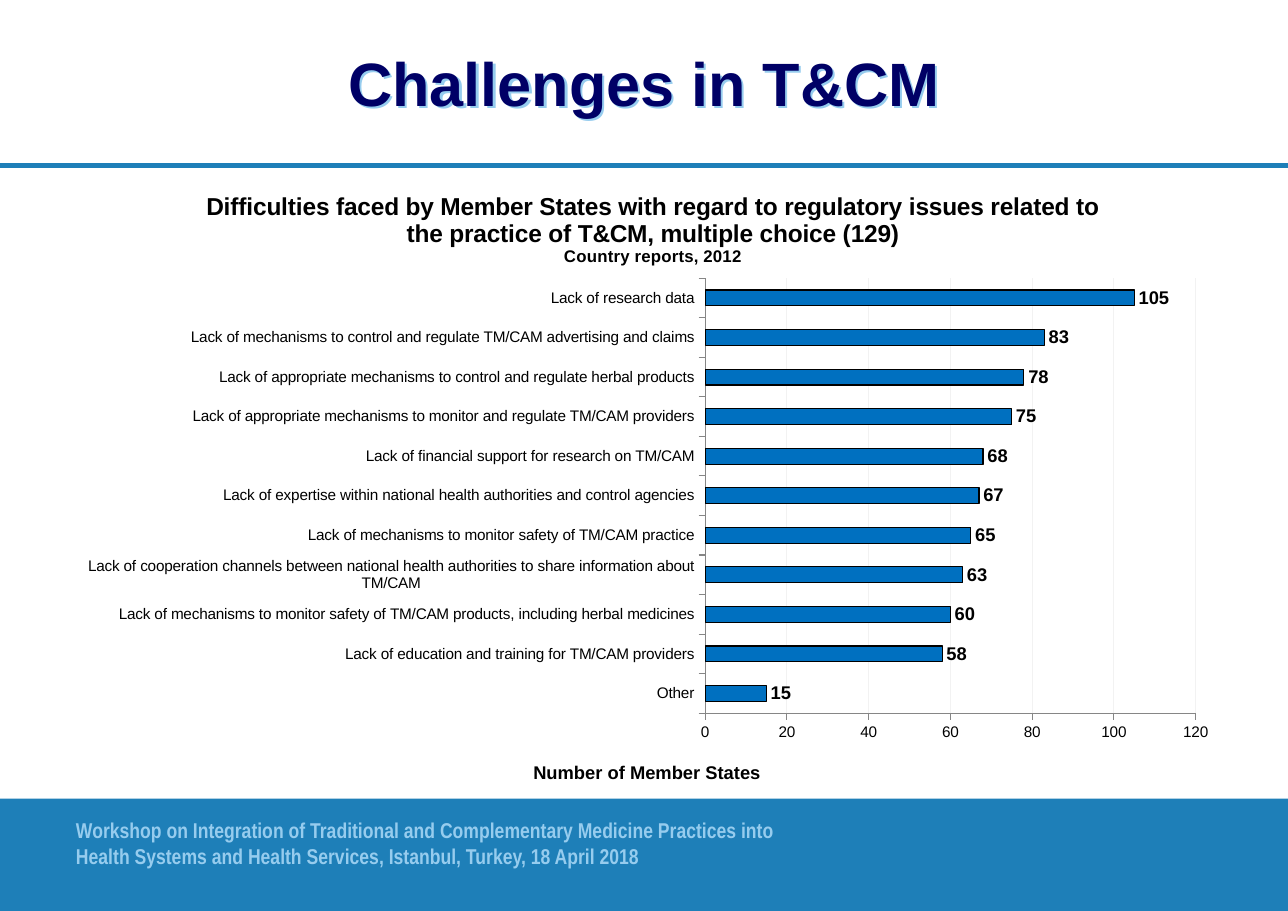
from lxml import etree
from pptx import Presentation
from pptx.chart.data import CategoryChartData
from pptx.dml.color import RGBColor
from pptx.enum.chart import XL_CHART_TYPE, XL_LABEL_POSITION, XL_TICK_MARK
from pptx.enum.shapes import MSO_CONNECTOR, MSO_SHAPE
from pptx.enum.text import MSO_ANCHOR, PP_ALIGN
from pptx.oxml.ns import qn
from pptx.util import Inches, Pt

BAR_CLUSTERED = XL_CHART_TYPE.BAR_CLUSTERED
OUTSIDE_END = XL_LABEL_POSITION.OUTSIDE_END
TICK_OUTSIDE = XL_TICK_MARK.OUTSIDE
STRAIGHT = MSO_CONNECTOR.STRAIGHT
RECTANGLE = MSO_SHAPE.RECTANGLE
TOP, MIDDLE = MSO_ANCHOR.TOP, MSO_ANCHOR.MIDDLE
LEFT, CENTER = PP_ALIGN.LEFT, PP_ALIGN.CENTER

BLUE = RGBColor(0x1E, 0x7F, 0xB8)
PALE_BLUE = RGBColor(0x96, 0xCC, 0xEE)
NAVY = RGBColor(0x00, 0x00, 0x66)
BAR_BLUE = RGBColor(0x00, 0x70, 0xC0)
BLACK = RGBColor(0x00, 0x00, 0x00)
AXIS_GRAY = RGBColor(0x86, 0x86, 0x86)
GRID_GRAY = RGBColor(0xF2, 0xF2, 0xF2)

SLIDE_WIDTH, SLIDE_HEIGHT = 11.69, 8.27
FOOTER_TOP = 7.25

DIFFICULTIES = [
    ("Other", 15),
    ("Lack of education and training for TM/CAM providers", 58),
    ("Lack of mechanisms to monitor safety of TM/CAM products, including herbal medicines", 60),
    ("Lack of cooperation channels between national health authorities to share "
     "information about TM/CAM", 63),
    ("Lack of mechanisms to monitor safety of TM/CAM practice", 65),
    ("Lack of expertise within national health authorities and control agencies", 67),
    ("Lack of financial support for research on TM/CAM", 68),
    ("Lack of appropriate mechanisms to monitor and regulate TM/CAM providers", 75),
    ("Lack of appropriate mechanisms to control and regulate herbal products", 78),
    ("Lack of mechanisms to control and regulate TM/CAM advertising and claims", 83),
    ("Lack of research data", 105),
]
CHART_TITLE = [
    ("Difficulties faced by Member States with regard to regulatory issues related to "
     "the practice of T&CM, multiple choice (129)", 16),
    ("Country reports, 2012", 11),
]
AXIS_TITLE = [("Number of Member States", 12)]


def format_font(font, size, color=BLACK, bold=False, name="Arial"):
    values = {"size": Pt(size), "bold": bold, "name": name}
    for attribute, value in values.items():
        setattr(font, attribute, value)
    font.color.rgb = color


def format_line(line, color, width):
    line.color.rgb = color
    line.width = Pt(width)


def add_rule(slide, top):
    rule = slide.shapes.add_connector(
        STRAIGHT, Inches(0), Inches(top), Inches(SLIDE_WIDTH), Inches(top))
    format_line(rule.line, BLUE, 3)
    etree.SubElement(rule.line._get_or_add_ln().getparent(), qn("a:effectLst"))


def add_band(slide, top):
    band = slide.shapes.add_shape(
        RECTANGLE, Inches(0), Inches(top), Inches(SLIDE_WIDTH), Inches(SLIDE_HEIGHT - top))
    band.shadow.inherit = False
    band.fill.solid()
    band.fill.fore_color.rgb = BLUE
    band.line.fill.background()


def add_text(slide, text, box, align, anchor, **font_values):
    shape = slide.shapes.add_textbox(*map(Inches, box))
    frame = shape.text_frame
    values = {"word_wrap": True, "vertical_anchor": anchor, "margin_left": 0,
              "margin_right": 0, "margin_top": 0, "margin_bottom": 0}
    for attribute, value in values.items():
        setattr(frame, attribute, value)
    paragraph = frame.paragraphs[0]
    paragraph.alignment = align
    run = paragraph.add_run()
    run.text = text
    format_font(run.font, **font_values)
    return shape


def add_text_shadow(shape, color):
    """Shadow of an unfilled box, which falls from its letters."""
    effects = etree.SubElement(shape.element.spPr, qn("a:effectLst"))
    shadow = etree.SubElement(effects, qn("a:outerShdw"), dist=str(Pt(2)), dir="2700000",
                              algn="ctr", rotWithShape="0")
    etree.SubElement(shadow, qn("a:srgbClr"), val=str(color))


def set_layout(element, index, **fractions):
    """Place a chart part by fractions of the chart's width and height."""
    for old_layout in element.findall(qn("c:layout")):
        element.remove(old_layout)
    layout = etree.Element(qn("c:layout"))
    manual = etree.SubElement(layout, qn("c:manualLayout"))
    settings = {"xMode": "edge", "yMode": "edge", **fractions}
    if "w" in fractions:
        settings = {"layoutTarget": "inner", **settings}
    for name, value in settings.items():
        etree.SubElement(manual, qn(f"c:{name}"), val=str(value))
    element.insert(index, layout)


def fill_title(title, lines, x, y):
    frame = title.text_frame
    for number, (text, size) in enumerate(lines):
        paragraph = frame.add_paragraph() if number else frame.paragraphs[0]
        run = paragraph.add_run()
        run.text = text
        format_font(run.font, size, bold=True)
    set_layout(title._element, 1, x=x, y=y)


def format_axes(chart):
    for axis in (chart.category_axis, chart.value_axis):
        axis.major_tick_mark = TICK_OUTSIDE
        format_line(axis.format.line, AXIS_GRAY, 0.75)
        format_font(axis.tick_labels.font, 10)
    chart.category_axis.has_major_gridlines = False
    value_axis = chart.value_axis
    values = {"minimum_scale": 0, "maximum_scale": 120, "major_unit": 20,
              "has_major_gridlines": True, "has_title": True}
    for attribute, value in values.items():
        setattr(value_axis, attribute, value)
    format_line(value_axis.major_gridlines.format.line, GRID_GRAY, 0.75)
    fill_title(value_axis.axis_title, AXIS_TITLE, x=0.4, y=0.93)


def format_bars(plot):
    plot.gap_width = 150
    plot.vary_by_categories = False
    bars = plot.series[0]
    bars.format.fill.solid()
    bars.format.fill.fore_color.rgb = BAR_BLUE
    format_line(bars.format.line, BLACK, 0.75)
    labels = bars.data_labels
    labels.show_value = True
    labels.position = OUTSIDE_END
    format_font(labels.font, 12, bold=True)


def add_difficulties_chart(slide):
    data = CategoryChartData()
    data.categories = [label for label, count in DIFFICULTIES]
    data.add_series("Series 1", [count for label, count in DIFFICULTIES])
    chart = slide.shapes.add_chart(
        BAR_CLUSTERED, Inches(0.57), Inches(1.48), Inches(10.6), Inches(5.81), data).chart
    format_font(chart.font, 10)
    chart.has_legend = False
    chart.has_title = True
    fill_title(chart.chart_title, CHART_TITLE, x=0.12, y=0.04)
    format_axes(chart)
    format_bars(chart.plots[0])
    plot_area = chart._chartSpace.chart.plotArea
    set_layout(plot_area, 0, x=0.55, y=0.18, w=0.42, h=0.68)


def main():
    presentation = Presentation()
    presentation.slide_width = Inches(SLIDE_WIDTH)
    presentation.slide_height = Inches(SLIDE_HEIGHT)
    slide = presentation.slides.add_slide(presentation.slide_layouts[6])
    add_rule(slide, 1.5)
    add_band(slide, FOOTER_TOP)
    add_text(slide, "Workshop on Integration of Traditional and Complementary Medicine "
             "Practices into Health Systems and Health Services, Istanbul, Turkey, 18 April 2018",
             (0.69, 7.42, 6.54, 0.85), LEFT, TOP,
             size=14, color=PALE_BLUE, bold=True, name="Arial Narrow")
    heading = add_text(slide, "Challenges in T&CM", (0, 0, SLIDE_WIDTH, 1.49), CENTER, MIDDLE,
                       size=40, color=NAVY, bold=True)
    add_text_shadow(heading, PALE_BLUE)
    add_difficulties_chart(slide)
    presentation.save("out.pptx")


if __name__ == "__main__":
    main()
